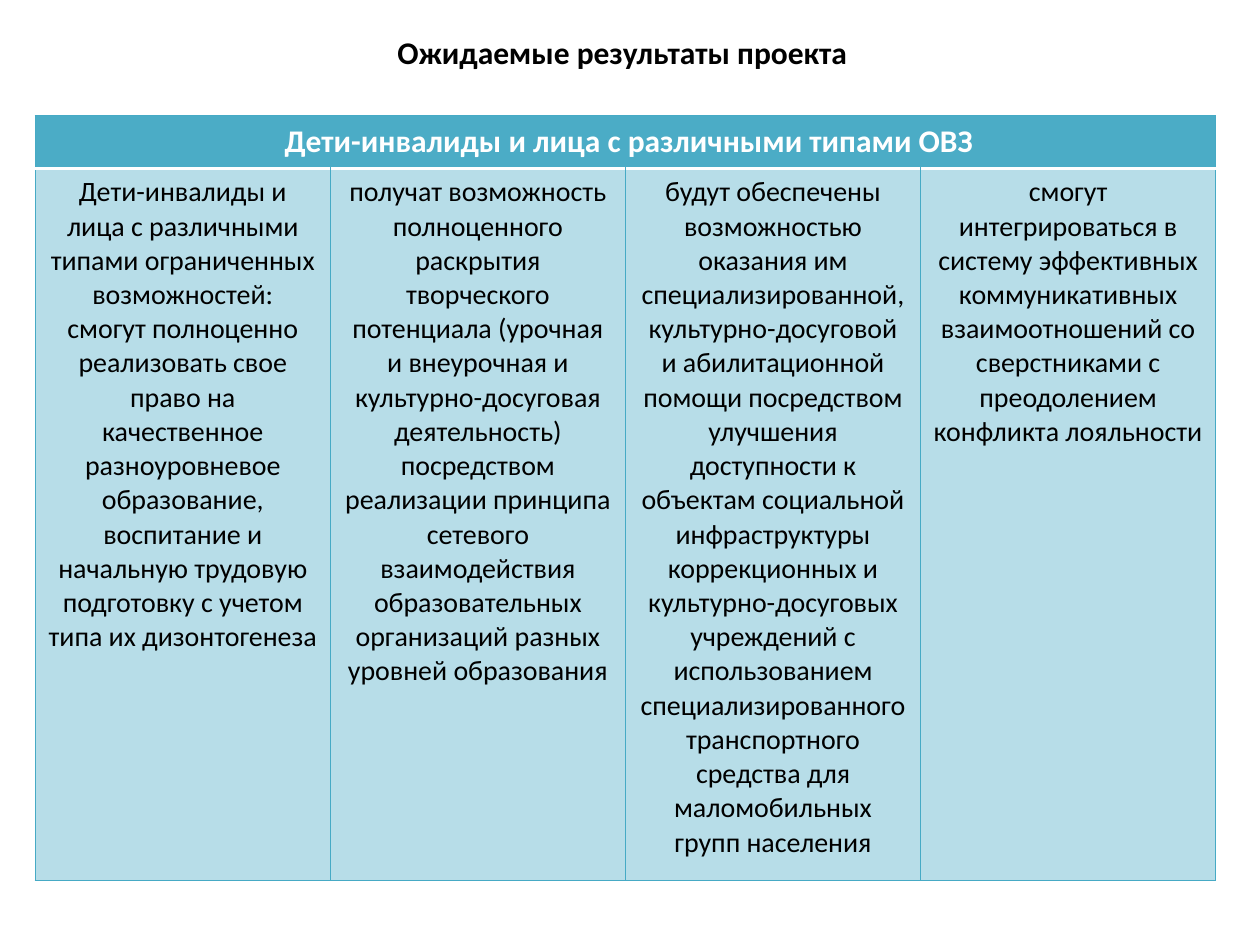
from lxml import etree
from pptx import Presentation
from pptx import util as u
from pptx.dml.color import RGBColor
from pptx.enum import text
from pptx.oxml import ns

BLACK = RGBColor(0x00, 0x00, 0x00)
WHITE = RGBColor(0xFF, 0xFF, 0xFF)
TEAL = RGBColor(0x4B, 0xAC, 0xC6)
BORDER = RGBColor(0x46, 0xAA, 0xC5)
FONT = "Calibri"

TITLE = "Ожидаемые результаты проекта"
HEADER = "\N{NO-BREAK SPACE}Дети-инвалиды и лица с различными типами ОВЗ"
RESULTS = [
    [
        "Дети-инвалиды и лица с различными типами ограниченных возможностей:",
        "смогут полноценно реализовать свое право на качественное разноуровневое "
        "образование, воспитание и начальную трудовую подготовку с учетом типа их "
        "дизонтогенеза",
    ],
    [
        "получат возможность полноценного раскрытия творческого потенциала (урочная "
        "и внеурочная и культурно-досуговая деятельность) посредством реализации "
        "принципа сетевого взаимодействия образовательных организаций разных уровней "
        "образования",
    ],
    [
        "будут обеспечены возможностью оказания им специализированной, "
        "культурно-досуговой и абилитационной помощи посредством улучшения "
        "доступности к объектам социальной инфраструктуры коррекционных и "
        "культурно-досуговых учреждений с использованием специализированного "
        "транспортного средства для маломобильных групп населения",
    ],
    [
        "смогут интегрироваться в систему эффективных коммуникативных "
        "взаимоотношений со сверстниками с преодолением конфликта лояльности",
    ],
]


def write_text(frame, paragraphs, size=16, color=BLACK, bold=False):
    frame.word_wrap = True
    for index, content in enumerate(paragraphs):
        paragraph = frame.paragraphs[0] if index == 0 else frame.add_paragraph()
        paragraph.alignment = text.PP_ALIGN.CENTER
        run = paragraph.add_run()
        run.text = content
        run.font.name = FONT
        run.font.size = u.Pt(size)
        run.font.bold = bold
        run.font.color.rgb = color


def add_fill(parent, color):
    fill = etree.SubElement(parent, ns.qn("a:solidFill"))
    return etree.SubElement(fill, ns.qn("a:srgbClr"), val=str(color))


def style_cell(cell, opacity=100, **edges):
    properties = cell._tc.get_or_add_tcPr()
    for side in "LRTB":
        color, width = edges.get(side, (BORDER, 0.75))
        line = etree.SubElement(properties, ns.qn(f"a:ln{side}"), w=str(u.Pt(width)))
        add_fill(line, color)
    color = add_fill(properties, TEAL)
    if opacity < 100:
        etree.SubElement(color, ns.qn("a:alpha"), val=str(opacity * 1000))


def add_title(slide, left, top, width, height):
    box = slide.shapes.add_textbox(left, top, width, height)
    write_text(box.text_frame, [TITLE], size=18, bold=True)


def add_results_table(slide, left, top, width, height):
    header_height = u.Inches(0.42)
    count = len(RESULTS)
    table = slide.shapes.add_table(2, count, left, top, width, height).table
    table.horz_banding = False
    table.rows[0].height = header_height
    table.rows[1].height = height - header_height

    divider = (WHITE, 2)
    header = table.cell(0, 0)
    header.merge(table.cell(0, count - 1))
    write_text(header.text_frame, [HEADER], size=18, color=WHITE, bold=True)
    for index, paragraphs in enumerate(RESULTS):
        style_cell(table.cell(0, index), B=divider)
        cell = table.cell(1, index)
        write_text(cell.text_frame, paragraphs)
        style_cell(cell, opacity=40, T=divider)


def main():
    presentation = Presentation()
    presentation.slide_width = u.Inches(10)
    presentation.slide_height = u.Inches(7.5)
    slide = presentation.slides.add_slide(presentation.slide_layouts[6])
    add_title(slide, u.Inches(0.57), u.Inches(0.21), u.Inches(8.74), u.Inches(0.4))
    add_results_table(slide, u.Inches(0.28), u.Inches(0.92), u.Inches(9.37), u.Inches(6.07))
    presentation.save("out.pptx")


if __name__ == "__main__":
    main()
